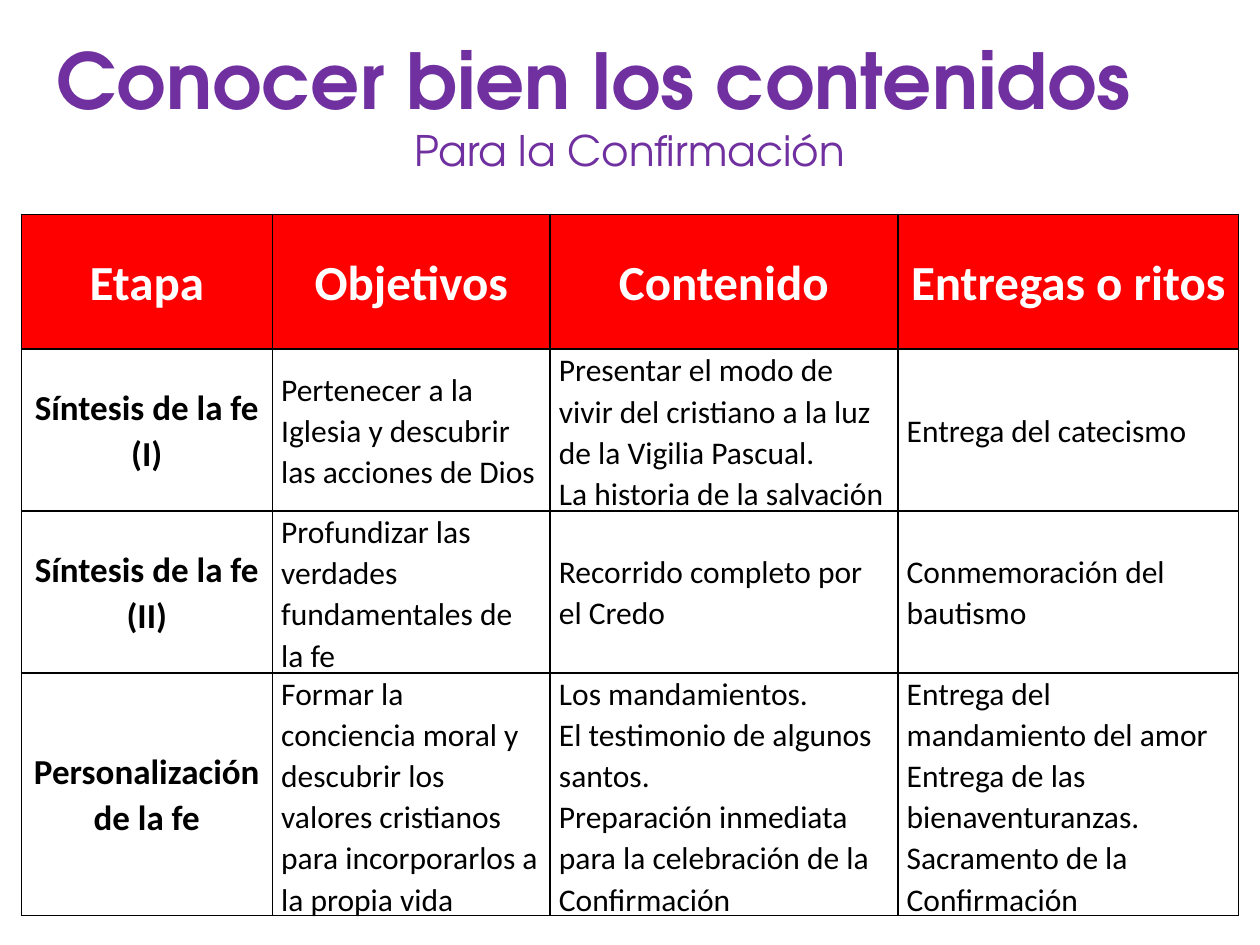
import pptx
import pptx.dml.color
import pptx.enum.text
import pptx.oxml
import pptx.oxml.ns
import pptx.util

Cm = pptx.util.Cm
Pt = pptx.util.Pt
RGBColor = pptx.dml.color.RGBColor
PP_ALIGN = pptx.enum.text.PP_ALIGN
MSO_ANCHOR = pptx.enum.text.MSO_ANCHOR

PURPLE = RGBColor(0x70, 0x30, 0xA0)
RED = RGBColor(0xFF, 0x00, 0x00)
WHITE = RGBColor(0xFF, 0xFF, 0xFF)
BLACK = RGBColor(0x00, 0x00, 0x00)
HEADING_FONT = "TeX Gyre Adventor"
TABLE_FONT = "Calibri"

HEADING = [
    ("Conocer bien los contenidos", 44, True, PP_ALIGN.LEFT),
    ("Para la Confirmación", 24, False, PP_ALIGN.CENTER),
]
STAGES = [
    [["Etapa"], ["Objetivos"], ["Contenido"], ["Entregas o ritos"]],
    [
        ["Síntesis de la fe (I)"],
        ["Pertenecer a la Iglesia y descubrir las acciones de Dios"],
        ["Presentar el modo de vivir del cristiano a la luz de la Vigilia Pascual.",
         "La historia de la salvación"],
        ["Entrega del catecismo"],
    ],
    [
        ["Síntesis de la fe (II)"],
        ["Profundizar las verdades fundamentales de la fe"],
        ["Recorrido completo por el Credo"],
        ["Conmemoración del bautismo"],
    ],
    [
        ["Personalización de la fe"],
        ["Formar la conciencia moral y descubrir los valores cristianos "
         "para incorporarlos a la propia vida"],
        ["Los mandamientos.",
         "El testimonio de algunos santos.",
         "Preparación inmediata para la celebración de la Confirmación"],
        ["Entrega del mandamiento del amor",
         "Entrega de las bienaventuranzas.",
         "Sacramento de la Confirmación"],
    ],
]
COLUMN_WIDTHS = [5.06, 5.6, 7.01, 6.87]
ROW_HEIGHTS = [2.72, 3.15, 3.15, 4.72]


def write_paragraph(paragraph, text, font, size, bold, color, align):
    paragraph.alignment = align
    run = paragraph.add_run()
    run.text = text
    run.font.name = font
    run.font.size = Pt(size)
    run.font.bold = bold
    run.font.color.rgb = color


def paragraph_at(frame, index):
    return frame.paragraphs[0] if index == 0 else frame.add_paragraph()


def outline_cell(cell):
    properties = cell._tc.get_or_add_tcPr()
    for side in ("lnL", "lnR", "lnT", "lnB"):
        properties.append(pptx.oxml.parse_xml(
            f'<a:{side} {pptx.oxml.ns.nsdecls("a")} w="{Pt(1)}"><a:solidFill>'
            f'<a:srgbClr val="{BLACK}"/></a:solidFill></a:{side}>'))


def cell_style(row, column):
    if row == 0:
        return 28, True, WHITE, PP_ALIGN.CENTER
    if column == 0:
        return 20, True, BLACK, PP_ALIGN.CENTER
    return 18, False, BLACK, PP_ALIGN.LEFT


def fill_cell(cell, row, column, lines):
    outline_cell(cell)
    if row == 0:
        cell.fill.solid()
        cell.fill.fore_color.rgb = RED
    else:
        cell.fill.background()
    cell.vertical_anchor = MSO_ANCHOR.MIDDLE
    cell.margin_left = cell.margin_right = Cm(0.18)
    cell.margin_top = cell.margin_bottom = 0
    for index, line in enumerate(lines):
        paragraph = paragraph_at(cell.text_frame, index)
        paragraph.line_spacing = 1.07
        write_paragraph(paragraph, line, TABLE_FONT, *cell_style(row, column))


def main():
    deck = pptx.Presentation()
    deck.slide_width, deck.slide_height = Cm(25.4), Cm(19.05)
    slide = deck.slides.add_slide(deck.slide_layouts[5])

    heading = slide.shapes.title
    heading.left, heading.top = Cm(0.89), Cm(0.53)
    heading.width, heading.height = Cm(23.6), Cm(3.18)
    frame = heading.text_frame
    frame.word_wrap = True
    frame.auto_size = pptx.enum.text.MSO_AUTO_SIZE.SHAPE_TO_FIT_TEXT
    frame.vertical_anchor = MSO_ANCHOR.TOP
    for index, (text, size, bold, align) in enumerate(HEADING):
        write_paragraph(paragraph_at(frame, index), text, HEADING_FONT,
                        size, bold, PURPLE, align)

    stages = slide.shapes.add_table(
        len(STAGES), len(COLUMN_WIDTHS), Cm(0.43), Cm(4.32),
        Cm(sum(COLUMN_WIDTHS)), Cm(sum(ROW_HEIGHTS))).table
    stages.horz_banding = False
    for column, width in zip(stages.columns, COLUMN_WIDTHS):
        column.width = Cm(width)
    for row, height in zip(stages.rows, ROW_HEIGHTS):
        row.height = Cm(height)
    for row, cells in enumerate(STAGES):
        for column, lines in enumerate(cells):
            fill_cell(stages.cell(row, column), row, column, lines)

    deck.save("out.pptx")


if __name__ == "__main__":
    main()
